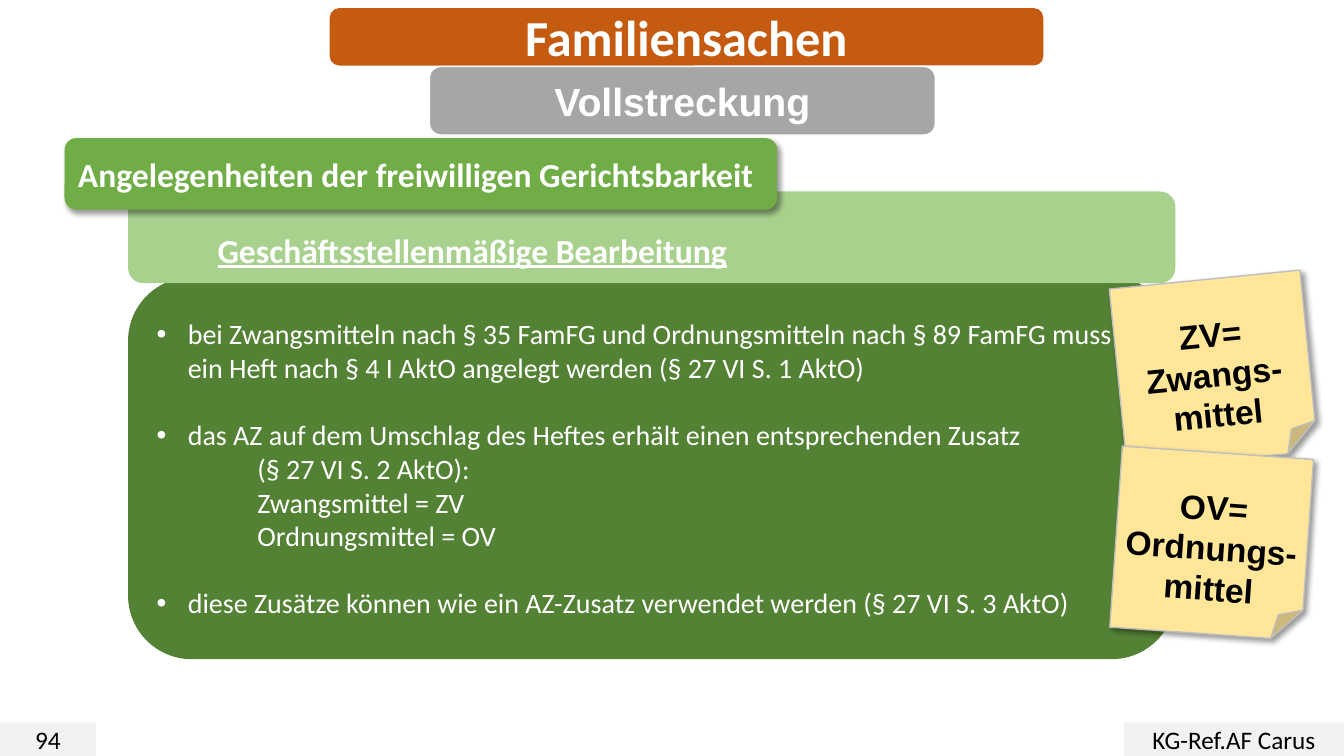
from lxml import etree
from pptx import Presentation
from pptx.dml.color import RGBColor
from pptx.enum.shapes import MSO_SHAPE
from pptx.enum.text import MSO_ANCHOR, PP_ALIGN
from pptx.oxml.ns import qn
from pptx.util import Emu, Inches, Pt

ROUND = MSO_SHAPE.ROUNDED_RECTANGLE
RECT = MSO_SHAPE.RECTANGLE
NOTE = MSO_SHAPE.FOLDED_CORNER
LEFT, CENTER = PP_ALIGN.LEFT, PP_ALIGN.CENTER
MIDDLE = MSO_ANCHOR.MIDDLE
WIDTH, HEIGHT = Inches(13.333), Inches(7.5)
WHITE, BLACK = "FFFFFF", "000000"
BODY_X, BODY_W = 9.53, 77.93
FOOTER_Y, FOOTER_H = 95.6, 4.4

DUTIES = [
    ("bei Zwangsmitteln nach § 35 FamFG und Ordnungsmitteln nach § 89 FamFG muss "
     "ein Heft nach § 4 I AktO angelegt werden (§ 27 VI S. 1 AktO)", []),
    ("das AZ auf dem Umschlag des Heftes erhält einen entsprechenden Zusatz",
     ["(§ 27 VI S. 2 AktO):", "Zwangsmittel = ZV", "Ordnungsmittel = OV"]),
    ("diese Zusätze können wie ein AZ-Zusatz verwendet werden (§ 27 VI S. 3 AktO)", []),
]
NOTES = [
    (83.18, 36.93, -5.7, ["ZV=", "Zwangs-mittel"]),
    (83.03, 59.87, 4, ["OV=", "Ordnungs-mittel"]),
]


def color(value):
    return RGBColor.from_string(value)


def place(x, y, w, h):
    shares = ((x, WIDTH), (y, HEIGHT), (w, WIDTH), (h, HEIGHT))
    return [Emu(round(full * share / 100)) for share, full in shares]


def add_box(slide, kind, area, fill, line=None):
    sp = slide.shapes.add_shape(kind, *place(*area))
    sp.shadow.inherit = False
    sp.fill.solid()
    sp.fill.fore_color.rgb = color(fill)
    if line:
        sp.line.color.rgb = color(line)
        sp.line.width = Pt(1)
    else:
        sp.line.fill.background()
    sp.text_frame.word_wrap = True
    sp.text_frame.vertical_anchor = MIDDLE
    return sp


def add_shadow(sp):
    effects = sp._element.spPr.find(qn("a:effectLst"))
    shadow = etree.SubElement(effects, qn("a:outerShdw"), blurRad=str(Pt(4)),
                              dist=str(Pt(3)), dir="2700000", algn="tl", rotWithShape="0")
    tint = etree.SubElement(shadow, qn("a:srgbClr"), val=BLACK)
    etree.SubElement(tint, qn("a:alpha"), val="40000")


def write(tf, text, size=24, font="Calibri", ink=WHITE, bold=False,
          underline=False, align=CENTER, before=0):
    p = tf.paragraphs[0] if not tf.text else tf.add_paragraph()
    p.alignment = align
    p.space_before = Pt(before)
    r = p.add_run()
    r.text = text
    r.font.size = Pt(size)
    r.font.name = font
    r.font.bold = bold
    r.font.underline = underline
    r.font.color.rgb = color(ink)
    return p


def indent(p, left, hanging=0, bullet=None):
    pPr = p._p.get_or_add_pPr()
    pPr.set("marL", str(Inches(left)))
    pPr.set("indent", str(-Inches(hanging)))
    if bullet:
        etree.SubElement(pPr, qn("a:buFont"), typeface="Arial")
        etree.SubElement(pPr, qn("a:buChar"), char=bullet)


def add_label(slide, kind, area, fill, text, line=None, **style):
    sp = add_box(slide, kind, area, fill, line)
    write(sp.text_frame, text, **style)
    return sp


def add_duties(slide):
    tf = add_box(slide, ROUND, (BODY_X, 36.67, BODY_W, 50.53), "548235").text_frame
    for i, (duty, details) in enumerate(DUTIES):
        p = write(tf, duty, size=20, align=LEFT, before=24 if i else 0)
        indent(p, 0.31, 0.31, "•")
        for detail in details:
            indent(write(tf, detail, size=20, align=LEFT), 1)


def add_note(slide, x, y, angle, lines):
    sp = add_box(slide, NOTE, (x, y, 14.25, 24), "FFE699", "BFBFBF")
    sp.rotation = angle
    add_shadow(sp)
    sp.text_frame.margin_top = Inches(0.43)
    for text in lines:
        write(sp.text_frame, text, font="Arial", ink=BLACK, bold=True)


def add_heading(slide, area, text):
    tf = slide.shapes.add_textbox(*place(*area)).text_frame
    tf.word_wrap = True
    write(tf, text, bold=True, underline=True, align=LEFT)


def main():
    prs = Presentation()
    prs.slide_width, prs.slide_height = WIDTH, HEIGHT
    slide = prs.slides.add_slide(prs.slide_layouts[6])

    add_duties(slide)
    add_label(slide, ROUND, (24.53, 1.07, 53.1, 7.6), "C55A11",
              "Familiensachen", size=36, bold=True)
    for x, w, text in ((0, 7.13, "94"), (83.63, 16.37, "KG-Ref.AF Carus")):
        add_label(slide, RECT, (x, FOOTER_Y, w, FOOTER_H), "F2F2F2",
                  text, size=18, ink=BLACK)
    add_label(slide, ROUND, (31.95, 8.8, 37.65, 9.07), "A6A6A6", "Vollstreckung",
              line=WHITE, size=28, font="Arial", bold=True)
    add_box(slide, ROUND, (BODY_X, 25.33, BODY_W, 12.13), "A9D18E")
    add_heading(slide, (15.45, 29.73, 72, 6.67), "Geschäftsstellenmäßige Bearbeitung")
    topic = add_label(slide, ROUND, (4.8, 18.27, 53.03, 9.47), "70AD47",
                      "Angelegenheiten der freiwilligen Gerichtsbarkeit",
                      bold=True, align=LEFT)
    add_shadow(topic)
    for note in NOTES:
        add_note(slide, *note)

    prs.save("out.pptx")


if __name__ == "__main__":
    main()
